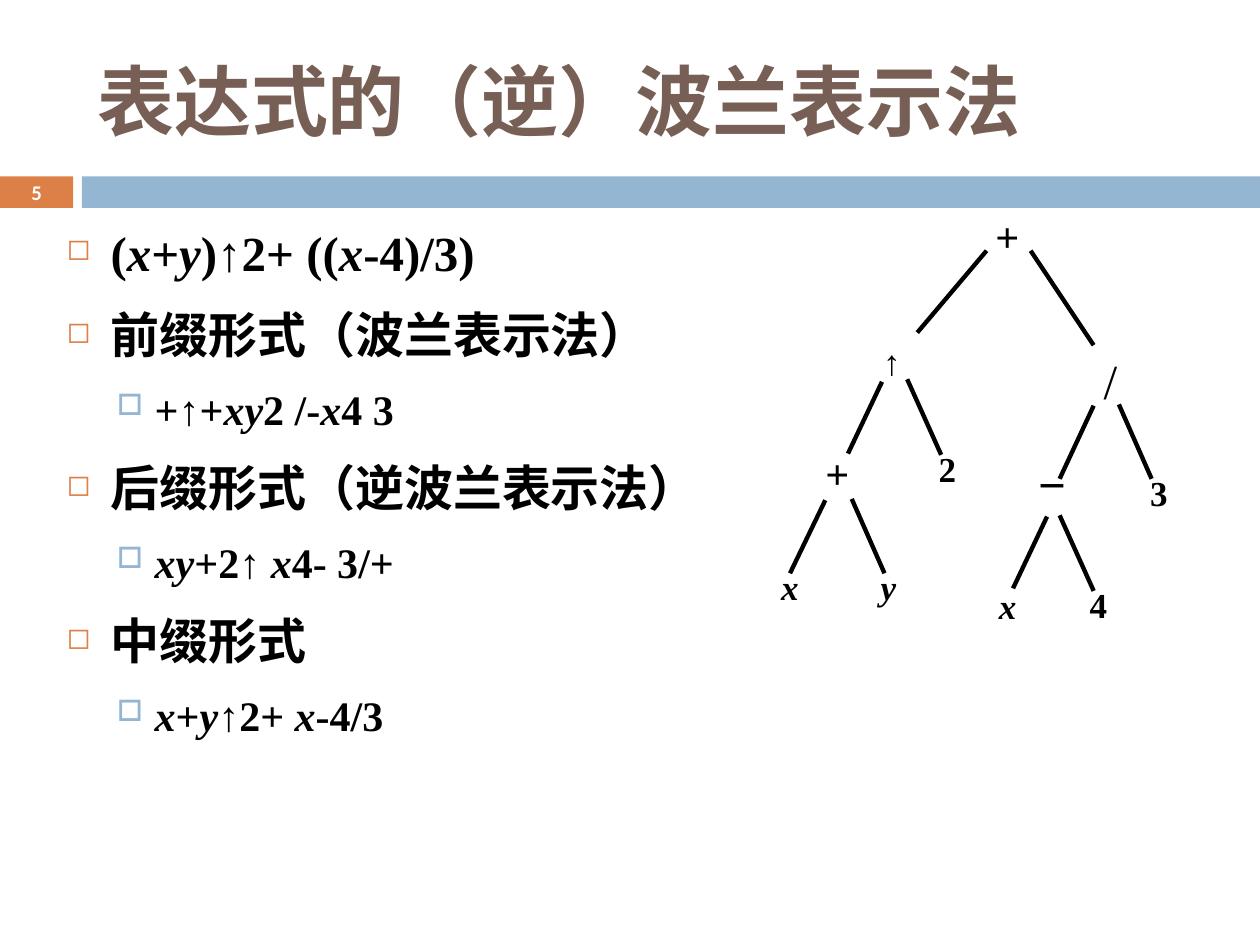
"""Build a slide on prefix, postfix and infix forms of an expression tree."""
from itertools import groupby

from lxml import etree
from pptx import Presentation
from pptx.dml.color import RGBColor
from pptx.enum.shapes import MSO_CONNECTOR, MSO_SHAPE
from pptx.enum.text import MSO_ANCHOR, MSO_AUTO_SIZE, PP_ALIGN
from pptx.oxml.ns import qn
from pptx.util import Inches, Pt

RECTANGLE = MSO_SHAPE.RECTANGLE
STRAIGHT = MSO_CONNECTOR.STRAIGHT
MIDDLE, TOP = MSO_ANCHOR.MIDDLE, MSO_ANCHOR.TOP
NO_FIT = MSO_AUTO_SIZE.NONE
LEFT, CENTER, JUSTIFY = PP_ALIGN.LEFT, PP_ALIGN.CENTER, PP_ALIGN.JUSTIFY
BLACK = RGBColor(0x00, 0x00, 0x00)
WHITE = RGBColor(0xFF, 0xFF, 0xFF)
BROWN = RGBColor(0x77, 0x5F, 0x55)
ORANGE = RGBColor(0xDD, 0x80, 0x47)
BLUE = RGBColor(0x94, 0xB6, 0xD2)
SERIF, SANS = "Times New Roman", "Calibri"

deck = Presentation()
deck.slide_width, deck.slide_height = Inches(10), Inches(7.5)
column, row = deck.slide_width / 100, deck.slide_height / 75
page = deck.slides.add_slide(deck.slide_layouts[5])


def grid(left, top, width, height):
    """Turn columns and rows into slide lengths."""
    return [round(value * step) for value, step in
            zip((left, top, width, height), (column, row, column, row))]


def write(para, text, size=20, font=SERIF, color=BLACK, bold=True, align=JUSTIFY):
    """Fill a paragraph, setting the variables x and y in italics."""
    para.alignment = align
    for is_variable, letters in groupby(text, lambda letter: letter in "xy"):
        span = para.add_run()
        span.text = "".join(letters)
        span.font.size, span.font.name = Pt(size), font
        span.font.bold, span.font.italic = bold, is_variable
        span.font.color.rgb = color


for left, width, color in ((0, 5.8, ORANGE), (6.5, 93.5, BLUE)):
    band = page.shapes.add_shape(RECTANGLE, *grid(left, 14, width, 2.5))
    band.shadow.inherit = False
    band.fill.solid()
    band.fill.fore_color.rgb = color
    band.line.fill.background()

title = page.shapes.title
title.left, title.top, title.width, title.height = grid(6.7, 2.5, 89.2, 10.8)
title.text_frame.auto_size = NO_FIT
title.text_frame.vertical_anchor = MIDDLE
write(title.text_frame.paragraphs[0], "表达式的（逆）波兰表示法",
      size=44, color=BROWN, align=LEFT)

number = page.shapes.add_textbox(*grid(0, 13.9, 5.8, 2.7)).text_frame
number.word_wrap = True
number.vertical_anchor = MIDDLE
write(number.paragraphs[0], "5", size=11.9, font=SANS, color=WHITE, align=CENTER)

LEVELS = (
    {"size": 28, "before": 7, "margin": 0.35, "hang": 0.35,
     "bullet": "◻", "color": ORANGE, "share": 60},
    {"size": 24, "before": 5.5, "margin": 0.7, "hang": 0.3,
     "bullet": "□", "color": BLUE, "share": 70},
)
FORMS = (
    (0, "(x+y)↑2+ ((x-4)/3)"),
    (0, "前缀形式（波兰表示法）"),
    (1, "+↑+xy2 /-x4 3"),
    (0, "后缀形式（逆波兰表示法）"),
    (1, "xy+2↑ x4- 3/+"),
    (0, "中缀形式"),
    (1, "x+y↑2+ x-4/3"),
)
body = page.shapes.add_textbox(*grid(4.3, 16.2, 53.6, 50.4)).text_frame
body.word_wrap = True
for index, (depth, text) in enumerate(FORMS):
    level = LEVELS[depth]
    para = body.add_paragraph() if index else body.paragraphs[0]
    para.level = depth
    para.line_spacing = 1.2
    para.space_before = Pt(level["before"])
    write(para, text, size=level["size"])
    settings = para._p.get_or_add_pPr()
    settings.set("marL", str(Inches(level["margin"])))
    settings.set("indent", str(-Inches(level["hang"])))
    tint = etree.SubElement(settings, qn("a:buClr"))
    etree.SubElement(tint, qn("a:srgbClr"), val=str(level["color"]))
    etree.SubElement(settings, qn("a:buSzPct"), val=str(level["share"] * 1000))
    etree.SubElement(settings, qn("a:buChar"), char=level["bullet"])

BRANCHES = (
    (78.3, 19.9, 72.8, 26.4), (81.8, 19.9, 86.8, 27.4),
    (70, 30.3, 67.3, 36), (72, 30.1, 74.7, 36.1),
    (65.5, 39.7, 62.7, 45.5), (67.6, 39.6, 70.2, 45.5),
    (86.8, 32.2, 84.1, 38), (88.8, 32.1, 91.4, 38),
    (83.1, 41, 80.4, 46.7), (84.1, 40.9, 86.8, 46.9),
)
for ends in BRANCHES:
    branch = page.shapes.add_connector(STRAIGHT, *grid(*ends))
    branch.line.color.rgb = BLACK
    branch.line.width = Pt(2.5)
    etree.SubElement(branch._element.spPr, qn("a:effectLst"))

LEAF = {"size": 20}
PLUS = {"size": 24, "align": CENTER}
MINUS = {"size": 28, "align": CENTER}
SLASH = {"size": 28, "bold": False}
NODES = (
    ("+", 77.6, 16.2, 4.7, PLUS),
    ("↑", 69.1, 26.5, 5.5, LEAF),
    ("/", 86.6, 27.3, 5.5, SLASH),
    ("+", 64.1, 35, 4.7, PLUS),
    ("2", 73.5, 35, 5.5, LEAF),
    ("−", 81.4, 35.5, 4, MINUS),
    ("3", 90.3, 36.9, 5.5, LEAF),
    ("x", 61, 44.4, 3.1, LEAF),
    ("y", 68.9, 44.4, 5.5, LEAF),
    ("x", 78.3, 45.9, 3.1, LEAF),
    ("4", 85.5, 45.8, 5.5, LEAF),
)
for symbol, left, top, width, style in NODES:
    node = page.shapes.add_textbox(*grid(left, top, width, 4)).text_frame
    node.word_wrap = True
    node.vertical_anchor = TOP
    write(node.paragraphs[0], symbol, **style)

deck.save("out.pptx")
